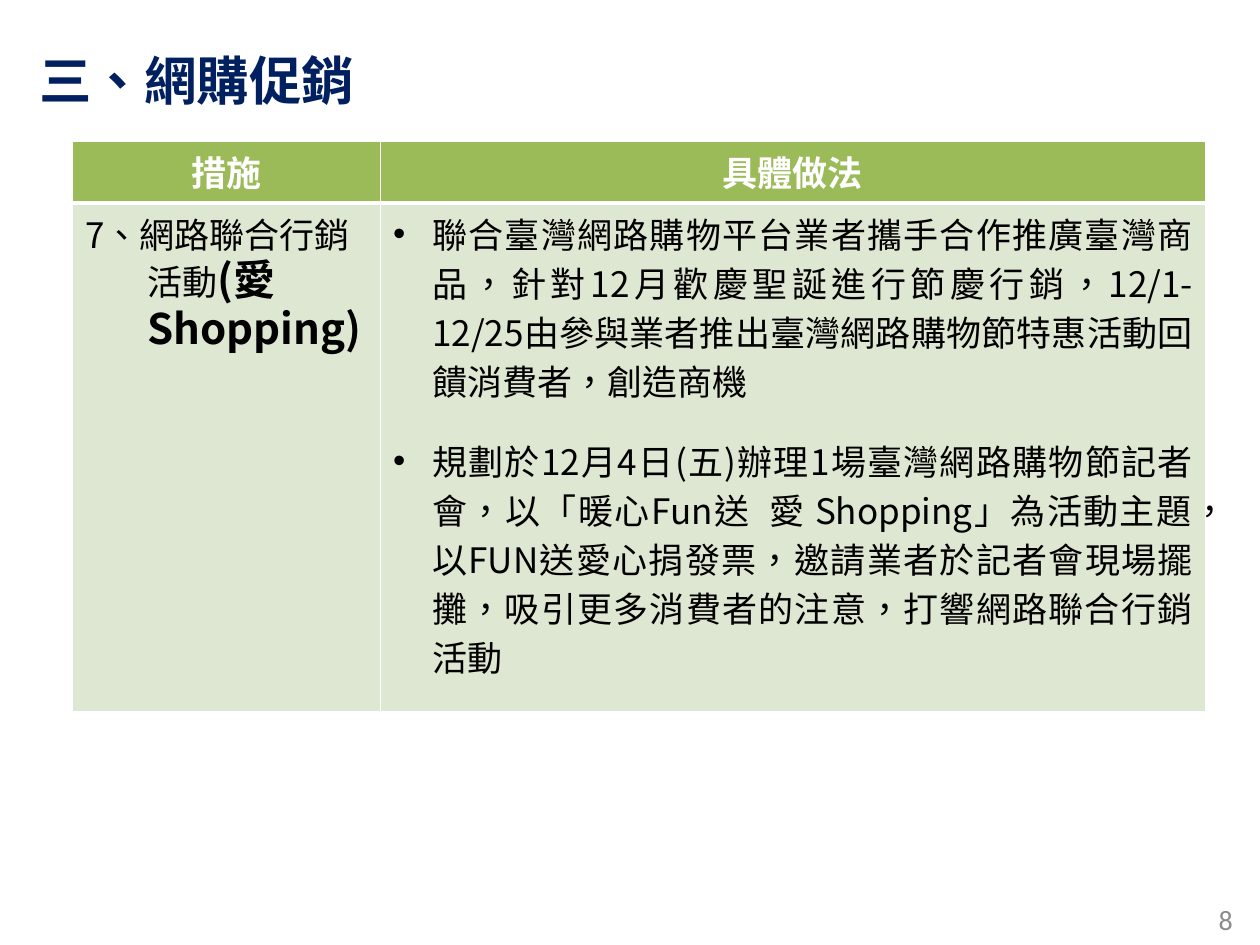
from lxml import etree
from pptx import Presentation
from pptx.dml.color import RGBColor
from pptx.enum.text import MSO_ANCHOR, PP_ALIGN
from pptx.oxml.ns import qn
from pptx.util import Cm, Pt

LEFT, CENTER, RIGHT, JUSTIFY = (
    PP_ALIGN.LEFT, PP_ALIGN.CENTER, PP_ALIGN.RIGHT, PP_ALIGN.JUSTIFY)
MIDDLE = MSO_ANCHOR.MIDDLE

WHITE = RGBColor(0xFF, 0xFF, 0xFF)
BLACK = RGBColor(0, 0, 0)
NAVY = RGBColor(0x00, 0x20, 0x60)
GRAY = RGBColor(0x8C, 0x8C, 0x8C)
GREEN = RGBColor(0x9B, 0xBB, 0x59)
PALE_GREEN = RGBColor(0xDE, 0xE7, 0xD1)

CJK_FONT = "Noto Sans CJK SC"
LATIN_FONT = "Calibri"

HEADINGS = ["措施", "具體做法"]
ACTIONS = [
    "聯合臺灣網路購物平台業者攜手合作推廣臺灣商品，針對12月歡慶聖誕進行節慶行銷，"
    "12/1-12/25由參與業者推出臺灣網路購物節特惠活動回饋消費者，創造商機",
    "規劃於12月4日(五)辦理1場臺灣網路購物節記者會，以「暖心Fun送  愛 Shopping」"
    "為活動主題，以FUN送愛心捐發票，邀請業者於記者會現場擺攤，吸引更多消費者的注意，"
    "打響網路聯合行銷活動",
]


def add_span(para, text, size, color, bold=False, font=CJK_FONT):
    span = para.add_run()
    span.text = text
    span.font.size = Pt(size)
    span.font.bold = bold
    span.font.color.rgb = color
    span.font.name = font
    properties = span._r.get_or_add_rPr()
    properties.set("lang", "zh-TW")
    etree.SubElement(properties, qn("a:ea"), typeface=font)


def set_hanging_indent(para, indent):
    properties = para._p.get_or_add_pPr()
    properties.set("marL", str(indent))
    properties.set("indent", str(-indent))


def add_bullet(para):
    properties = para._p.get_or_add_pPr()
    etree.SubElement(properties, qn("a:buFont"), typeface="Arial")
    etree.SubElement(properties, qn("a:buChar"), char="•")


def format_table_para(para, align):
    para.alignment = align
    para.line_spacing = Pt(28)
    para.space_after = Pt(18)


def style_cell(cell, fill, top, bottom):
    """Fill a cell and give it white borders; top and bottom are in points."""
    cell.fill.solid()
    cell.fill.fore_color.rgb = fill
    properties = cell._tc.get_or_add_tcPr()
    borders = [("a:lnL", 1), ("a:lnR", 1), ("a:lnT", top), ("a:lnB", bottom)]
    for place, (tag, width) in enumerate(borders):
        line = etree.Element(qn(tag), w=str(Pt(width)))
        solid = etree.SubElement(line, qn("a:solidFill"))
        etree.SubElement(solid, qn("a:srgbClr"), val=str(WHITE))
        properties.insert(place, line)


def add_label(page, left, top, width, height, align):
    """Add a vertically centred text box and return its first paragraph."""
    box = page.shapes.add_textbox(left, top, width, height)
    frame = box.text_frame
    frame.word_wrap = True
    frame.vertical_anchor = MIDDLE
    para = frame.paragraphs[0]
    para.alignment = align
    return para


def add_title(page, left, top, width, height):
    para = add_label(page, left, top, width, height, LEFT)
    set_hanging_indent(para, Cm(2))
    add_span(para, "三、網購促銷", 30, NAVY, bold=True)


def add_page_number(page, left, top, width, height):
    para = add_label(page, left, top, width, height, RIGHT)
    add_span(para, "8", 16, GRAY, font=LATIN_FONT)


def add_measures_table(page, left, top, width, height):
    table = page.shapes.add_table(2, 2, left, top, width, height).table
    measure_width, heading_height = Cm(6.21), Cm(1.22)
    table.columns[0].width = measure_width
    table.columns[1].width = width - measure_width
    table.rows[0].height = heading_height
    table.rows[1].height = height - heading_height

    for column, heading in enumerate(HEADINGS):
        cell = table.cell(0, column)
        style_cell(cell, GREEN, top=1, bottom=3)
        para = cell.text_frame.paragraphs[0]
        format_table_para(para, CENTER)
        add_span(para, heading, 20, WHITE, bold=True)
        style_cell(table.cell(1, column), PALE_GREEN, top=3, bottom=1)

    measure = table.cell(1, 0).text_frame.paragraphs[0]
    format_table_para(measure, LEFT)
    set_hanging_indent(measure, Cm(1.25))
    add_span(measure, "7、網路聯合行銷活動", 20, BLACK)
    add_span(measure, "(愛Shopping)", 24, BLACK, bold=True)

    frame = table.cell(1, 1).text_frame
    for place, action in enumerate(ACTIONS):
        para = frame.add_paragraph() if place else frame.paragraphs[0]
        format_table_para(para, JUSTIFY)
        set_hanging_indent(para, Cm(0.79))
        add_bullet(para)
        add_span(para, action, 20, BLACK)


def main():
    deck = Presentation()
    deck.slide_width, deck.slide_height = Cm(25.4), Cm(19.05)
    page = deck.slides.add_slide(deck.slide_layouts[6])
    add_page_number(page, Cm(19.18), Cm(18.03), Cm(5.92), Cm(1.02))
    add_measures_table(page, Cm(1.46), Cm(2.85), Cm(22.84), Cm(11.48))
    add_title(page, Cm(0.54), Cm(0.43), Cm(8.28), Cm(2.34))
    deck.save("out.pptx")


if __name__ == "__main__":
    main()
